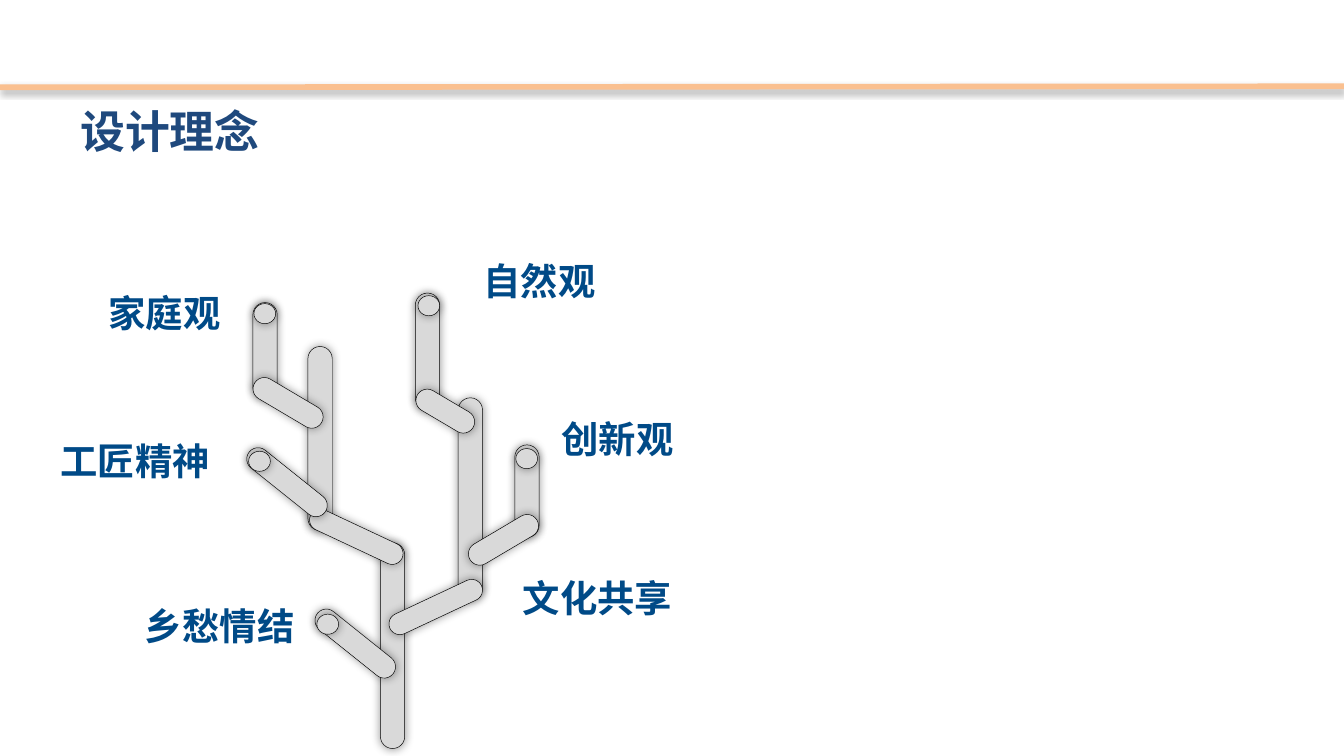
from dataclasses import dataclass

import pptx
import pptx.dml.color
import pptx.enum.shapes
import pptx.enum.text
import pptx.oxml
import pptx.oxml.ns
import pptx.util
from pptx.util import Cm

SHAPE = pptx.enum.shapes.MSO_SHAPE


@dataclass(frozen=True)
class Theme:
    rule: str = "FAC090"
    title: str = "1F497D"
    label: str = "004A87"
    branch: str = "D9D9D9"
    outline: str = "000000"
    title_font: str = "Noto Sans CJK SC"
    label_font: str = "Calibri"
    title_size: int = 24
    label_size: int = 20
    rule_width: float = 3
    outline_width: float = 0.25


@dataclass(frozen=True)
class Branch:
    """A capsule; lengths in cm, rotation in degrees."""
    left: float
    top: float
    width: float
    height: float
    rotation: float = 0


@dataclass(frozen=True)
class Bud:
    left: float
    top: float


@dataclass(frozen=True)
class Label:
    text: str
    left: float
    top: float
    width: float


THEME = Theme()
STEM, TWIG, LIMB = 0.46, 0.43, 0.41  # branch thicknesses
BUD_WIDTH, BUD_HEIGHT = 0.41, 0.38
LABEL_HEIGHT = 1.12

BRANCHES = [
    Branch(7.19, 10.26, STEM, 3.89),
    Branch(6.5, 11.25, TWIG, 1.83, 308.7),
    Branch(5.82, 6.55, STEM, 3.48),
    Branch(6.53, 9.19, LIMB, 1.91, 295.1),
    Branch(8.66, 7.52, STEM, 3.81),
    Branch(8.03, 10.52, LIMB, 1.91, 64.9),
    Branch(7.85, 5.54, STEM, 2.21),
    Branch(8.2, 7.16, TWIG, 1.22, 300.6),
    Branch(9.73, 8.41, STEM, 1.75),
    Branch(9.3, 9.47, TWIG, 1.47, 59.4),
    Branch(4.78, 5.72, STEM, 1.83),
    Branch(5.23, 6.88, TWIG, 1.47, 300.6),
    Branch(5.21, 8.2, TWIG, 1.83, 308.7),
]
BUDS = [Bud(5.99, 11.61), Bud(4.7, 8.53), Bud(9.75, 8.48),
        Bud(7.9, 5.59), Bud(4.8, 5.74)]
LABELS = [
    Label("家庭观", 1.8, 5.36, 3.07),
    Label("自然观", 8.89, 4.75, 3.07),
    Label("工匠精神", 0.89, 8.15, 3.36),
    Label("乡愁情结", 2.49, 11.28, 3.43),
    Label("创新观", 10.36, 7.75, 3.48),
    Label("文化共享", 9.63, 10.74, 3.48),
]


def rgb(color: str) -> pptx.dml.color.RGBColor:
    return pptx.dml.color.RGBColor.from_string(color)


def add_shadow(s, *, blur: float, distance: float, opacity: int) -> None:
    """Give a shape or connector a black shadow that falls downwards."""
    ns = pptx.oxml.ns.nsdecls("a")
    effects = pptx.oxml.parse_xml(
        f'<a:effectLst {ns}><a:outerShdw blurRad="{pptx.util.Pt(blur)}" '
        f'dist="{pptx.util.Pt(distance)}" dir="5400000" algn="ctr" rotWithShape="0">'
        f'<a:srgbClr val="000000"><a:alpha val="{opacity * 1000}"/></a:srgbClr>'
        f'</a:outerShdw></a:effectLst>')
    s._element.spPr.append(effects)


def add_wood(slide, kind: SHAPE, left: float, top: float, width: float,
             height: float, rotation: float = 0):
    """Add one grey, outlined, softly shadowed part of the tree."""
    s = slide.shapes.add_shape(kind, Cm(left), Cm(top), Cm(width), Cm(height))
    s.rotation = rotation
    s.fill.solid()
    s.fill.fore_color.rgb = rgb(THEME.branch)
    s.line.color.rgb = rgb(THEME.outline)
    s.line.width = pptx.util.Pt(THEME.outline_width)
    add_shadow(s, blur=5, distance=0, opacity=40)
    return s


def add_branch(slide, branch: Branch) -> None:
    s = add_wood(slide, SHAPE.ROUNDED_RECTANGLE, branch.left, branch.top,
                 branch.width, branch.height, branch.rotation)
    s.adjustments[0] = 0.5


def add_text(slide, text: str, *, left: float, top: float, width: float,
             height: float, font: str, size: int, color: str,
             grow: bool = False) -> None:
    sp = slide.shapes.add_textbox(Cm(left), Cm(top), Cm(width), Cm(height))
    tf = sp.text_frame
    tf.word_wrap = True
    if grow:
        tf.auto_size = pptx.enum.text.MSO_AUTO_SIZE.SHAPE_TO_FIT_TEXT
    r = tf.paragraphs[0].add_run()
    r.text = text
    r.font.name = font
    r.font.size = pptx.util.Pt(size)
    r.font.bold = True
    r.font.color.rgb = rgb(color)


def add_rule(slide) -> None:
    s = slide.shapes.add_connector(pptx.enum.shapes.MSO_CONNECTOR.STRAIGHT,
                                   Cm(0), Cm(1.65), Cm(25.4), Cm(1.63))
    s.line.color.rgb = rgb(THEME.rule)
    s.line.width = pptx.util.Pt(THEME.rule_width)
    add_shadow(s, blur=3.1, distance=1.8, opacity=35)


def main() -> None:
    prs = pptx.Presentation()
    prs.slide_width, prs.slide_height = Cm(25.4), Cm(14.29)
    slide = prs.slides.add_slide(prs.slide_layouts[6])

    add_rule(slide)
    add_text(slide, "设计理念", left=1.27, top=1.83, width=22.86, height=2.39,
             font=THEME.title_font, size=THEME.title_size, color=THEME.title)
    for branch in BRANCHES:
        add_branch(slide, branch)
    for bud in BUDS:
        add_wood(slide, SHAPE.OVAL, bud.left, bud.top, BUD_WIDTH, BUD_HEIGHT)
    for label in LABELS:
        add_text(slide, label.text, left=label.left, top=label.top,
                 width=label.width, height=LABEL_HEIGHT, font=THEME.label_font,
                 size=THEME.label_size, color=THEME.label, grow=True)

    prs.save("out.pptx")


if __name__ == "__main__":
    main()
